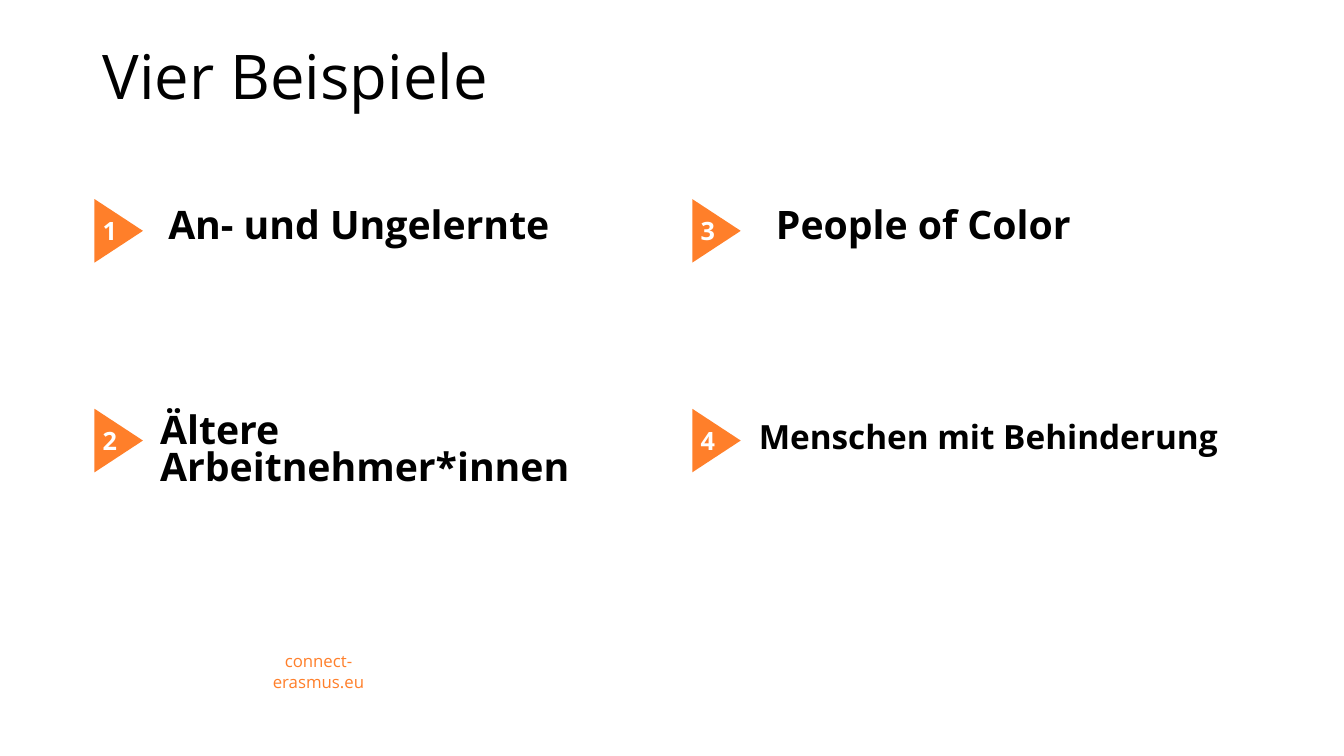
from dataclasses import dataclass

from pptx import Presentation
from pptx import util as u
from pptx.dml import color
from pptx.enum import shapes, text


@dataclass(frozen=True)
class Theme:
    font: str = "Open Sans"
    ink: str = "000000"
    accent: str = "FF7F2A"
    light: str = "FFFFFF"
    title: float = 44
    label: float = 28
    small_label: float = 23.8
    number: float = 18
    footer: float = 12


@dataclass(frozen=True)
class Box:
    left: float
    top: float
    width: float
    height: float

    def inner(self, dx, dy, width, height):
        return Box(self.left + dx, self.top + dy, width, height)

    def lengths(self):
        return [u.Pt(side) for side in (self.left, self.top, self.width, self.height)]


THEME = Theme()


def write(shape, words, size, ink=THEME.ink, bold=False, align=text.PP_ALIGN.LEFT,
          anchor=text.MSO_ANCHOR.TOP, spacing=1.0, wrap=True, fit=text.MSO_AUTO_SIZE.NONE):
    frame = shape.text_frame
    frame.word_wrap = wrap
    frame.auto_size = fit
    frame.vertical_anchor = anchor
    para = frame.paragraphs[0]
    para.alignment = align
    para.line_spacing = spacing
    span = para.add_run()
    span.text = words
    span.font.name = THEME.font
    span.font.size = u.Pt(size)
    span.font.bold = bold
    span.font.color.rgb = color.RGBColor.from_string(ink)


def add_title(page, box):
    title = page.shapes.title
    title.left, title.top, title.width, title.height = box.lengths()
    write(title, "Vier Beispiele", THEME.title, anchor=text.MSO_ANCHOR.BOTTOM, spacing=0.9)


def add_footer(page, box):
    write(page.shapes.add_textbox(*box.lengths()), "connect-erasmus.eu", THEME.footer,
          ink=THEME.accent, align=text.PP_ALIGN.CENTER, anchor=text.MSO_ANCHOR.MIDDLE)


def add_marker(page, box, number):
    turn = (box.height - box.width) / 2
    unturned = box.inner(-turn, turn, box.height, box.width)
    triangle = page.shapes.add_shape(shapes.MSO_SHAPE.ISOSCELES_TRIANGLE, *unturned.lengths())
    triangle.rotation = 90
    triangle.shadow.inherit = False
    triangle.fill.solid()
    triangle.fill.fore_color.rgb = color.RGBColor.from_string(THEME.accent)
    triangle.line.fill.background()
    digit = page.shapes.add_textbox(*box.inner(-1.2, 8.2, 25.2, 28.8).lengths())
    write(digit, str(number), THEME.number, ink=THEME.light, bold=True, wrap=False,
          fit=text.MSO_AUTO_SIZE.SHAPE_TO_FIT_TEXT)


def add_example(page, box, number, words, offset, height, size, spacing):
    label = page.shapes.add_textbox(*box.inner(*offset, 359.3, height).lengths())
    write(label, words, size, bold=True, spacing=spacing)
    add_marker(page, box.inner(0, 0, 34.6, 45.4), number)


def add_examples(page, box):
    examples = [
        ("An- und Ungelernte", (45.6, 4), 36.7, THEME.label, 0.8),
        ("Ältere Arbeitnehmer*innen", (39.8, 0.3), 63.4, THEME.label, 0.8),
        ("People of Color", (52.7, 1.1), 72, THEME.label, 0.9),
        ("Menschen mit Behinderung", (40.4, 7.5), 36.7, THEME.small_label, 0.8),
    ]
    width, height = box.width / 2, box.height / 2
    for index, example in enumerate(examples):
        column, row = divmod(index, 2)
        cell = box.inner(column * width, row * height, width, height)
        add_example(page, cell, index + 1, *example)


def main():
    deck = Presentation()
    deck.slide_width, deck.slide_height = u.Pt(960), u.Pt(540)
    page = deck.slides.add_slide(deck.slide_layouts[5])
    add_title(page, Box(66.2, 23, 828, 61.2))
    add_footer(page, Box(164.2, 468.7, 126.7, 21.6))
    add_examples(page, Box(67.5, 142.2, 854, 299.6))
    deck.save("out.pptx")


if __name__ == "__main__":
    main()
